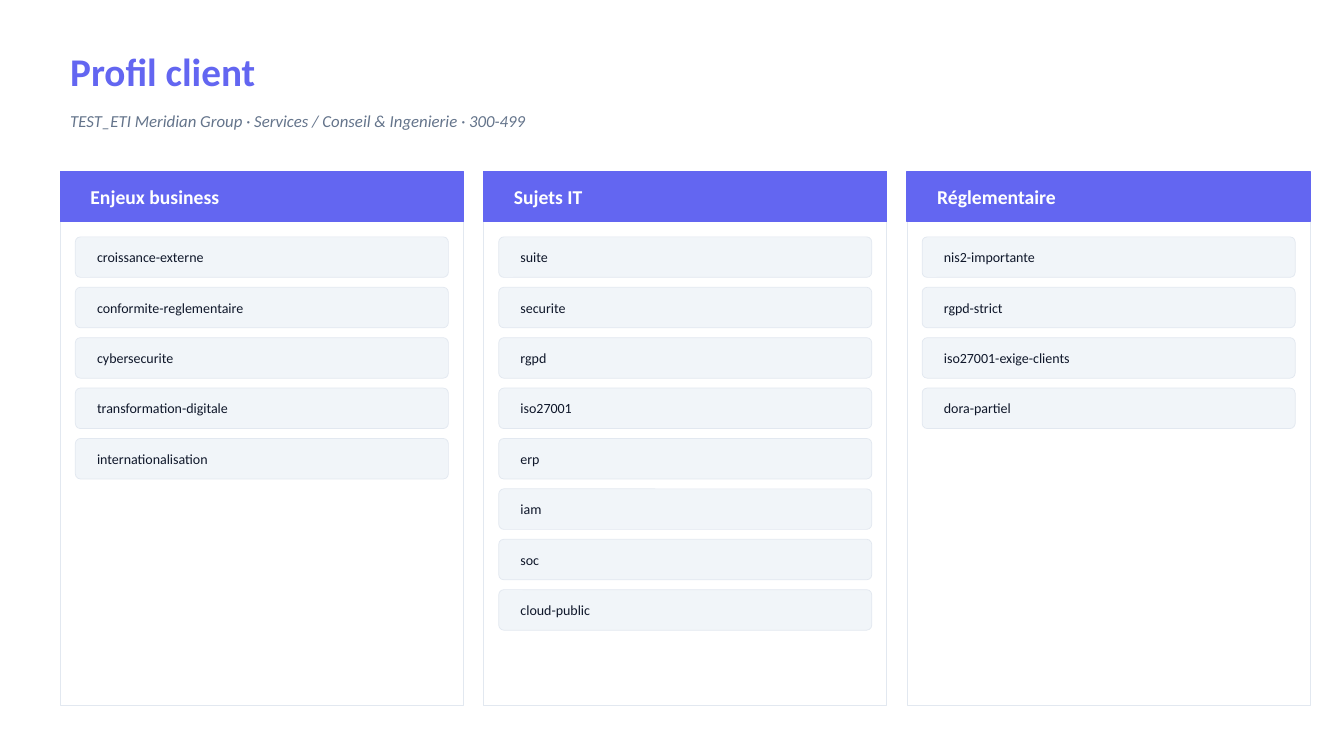
from dataclasses import dataclass

from pptx import Presentation
from pptx.dml.color import RGBColor
from pptx.enum.shapes import MSO_SHAPE as Geo
from pptx.enum.text import MSO_ANCHOR as Anchor, MSO_AUTO_SIZE as AutoSize, PP_ALIGN as Align
from pptx.util import Cm, Pt

COLORS = {
    "accent": "6366F1",
    "muted": "64748B",
    "border": "E2E8F0",
    "item": "F1F5F9",
    "ink": "0F172A",
    "white": "FFFFFF",
}
TITLE = {"size": Pt(28), "bold": True}
SUBTITLE = {"size": Pt(12), "italic": True}
HEADER = {"size": Pt(14), "bold": True}
ITEM = {"size": Pt(10)}

LEFT, TOP = 1.52, 4.32
COLUMN_W, COLUMN_H, COLUMN_STEP = 10.16, 13.46, 10.67
HEADER_H = 1.27
ITEM_PAD, ITEM_W, ITEM_H, ITEM_STEP = 0.38, 9.4, 1.02, 1.27


@dataclass
class Box:
    """Position and size in centimetres."""
    x: float
    y: float
    w: float
    h: float

    def lengths(self) -> tuple:
        """Return the four measures as lengths."""
        return Cm(self.x), Cm(self.y), Cm(self.w), Cm(self.h)


@dataclass
class Style:
    """Outline, fill and border of a shape."""
    geo: Geo
    fill: str
    line: str
    width: float


@dataclass
class Column:
    """A heading with the tags listed under it."""
    heading: str
    tags: list[str]


PANEL_STYLE = Style(Geo.RECTANGLE, "white", "border", 0.75)
HEADER_STYLE = Style(Geo.RECTANGLE, "accent", "accent", 1)
ITEM_STYLE = Style(Geo.ROUNDED_RECTANGLE, "item", "border", 0.5)

COLUMNS = [
    Column("Enjeux business", [
        "croissance-externe", "conformite-reglementaire", "cybersecurite",
        "transformation-digitale", "internationalisation"]),
    Column("Sujets IT", [
        "suite", "securite", "rgpd", "iso27001", "erp", "iam", "soc", "cloud-public"]),
    Column("Réglementaire", [
        "nis2-importante", "rgpd-strict", "iso27001-exige-clients", "dora-partiel"]),
]


def color(name: str) -> RGBColor:
    """Look up a palette colour."""
    return RGBColor.from_string(COLORS[name])


def write(s, text: str, ink: str, font: dict, inset: float = 0.25) -> None:
    """Put left-aligned, vertically centred text in a shape."""
    tf = s.text_frame
    frame = {"word_wrap": True, "auto_size": AutoSize.NONE,
             "vertical_anchor": Anchor.MIDDLE, "margin_left": Cm(inset)}
    for name, value in frame.items():
        setattr(tf, name, value)
    p = tf.paragraphs[0]
    p.alignment = Align.LEFT
    r = p.add_run()
    r.text = text
    for name, value in {"name": "Calibri", **font}.items():
        setattr(r.font, name, value)
    r.font.color.rgb = color(ink)


def add_box(slide, box: Box, style: Style):
    """Draw a filled and bordered shape."""
    s = slide.shapes.add_shape(style.geo, *box.lengths())
    s.shadow.inherit = False
    s.fill.solid()
    s.fill.fore_color.rgb = color(style.fill)
    s.line.color.rgb = color(style.line)
    s.line.width = Pt(style.width)
    return s


def add_column(slide, x: float, column: Column) -> None:
    """Draw a panel with its heading and tags."""
    add_box(slide, Box(x, TOP, COLUMN_W, COLUMN_H), PANEL_STYLE)
    s = add_box(slide, Box(x, TOP, COLUMN_W, HEADER_H), HEADER_STYLE)
    write(s, column.heading, "white", HEADER, 0.76)
    first = TOP + HEADER_H + ITEM_PAD
    for i, tag in enumerate(column.tags):
        box = Box(x + ITEM_PAD, first + i * ITEM_STEP, ITEM_W, ITEM_H)
        s = add_box(slide, box, ITEM_STYLE)
        s.adjustments[0] = 0.125
        write(s, tag, "ink", ITEM, 0.51)


def main() -> None:
    """Build the client profile slide."""
    prs = Presentation()
    prs.slide_width, prs.slide_height = Cm(33.87), Cm(19.05)
    slide = prs.slides.add_slide(prs.slide_layouts[5])
    title = slide.shapes.title
    title.left, title.top, title.width, title.height = Box(LEFT, 1.02, 30.48, 1.52).lengths()
    write(title, "Profil client", "accent", TITLE)
    subtitle = slide.shapes.add_textbox(*Box(LEFT, 2.54, 30.48, 1.02).lengths())
    write(subtitle, "TEST_ETI Meridian Group · Services / Conseil & Ingenierie · 300-499",
          "muted", SUBTITLE)
    for i, column in enumerate(COLUMNS):
        add_column(slide, LEFT + i * COLUMN_STEP, column)
    prs.save("out.pptx")


if __name__ == "__main__":
    main()
